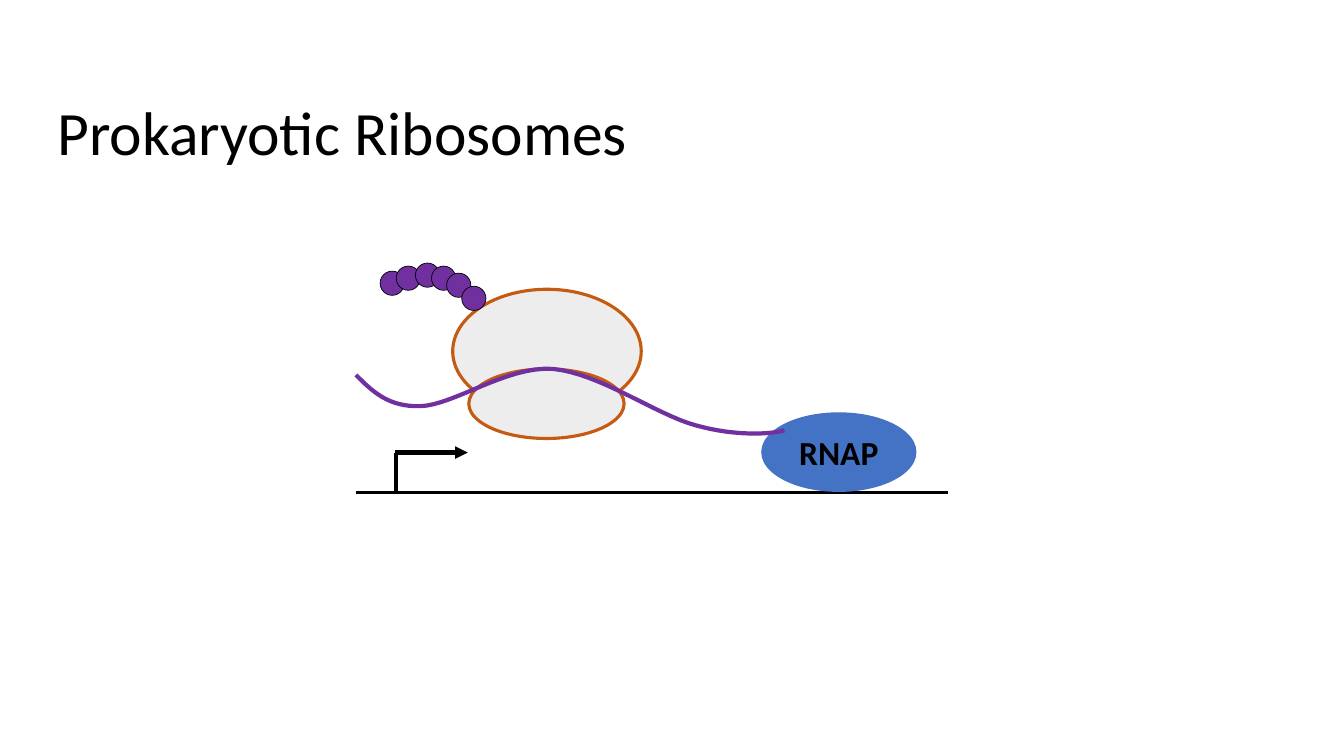
"""Builds a slide on prokaryotic ribosomes translating an mRNA during transcription."""
from lxml.etree import SubElement
from pptx import Presentation
from pptx.dml.color import RGBColor
from pptx.enum.shapes import MSO_CONNECTOR, MSO_SHAPE
from pptx.enum.text import MSO_ANCHOR, PP_ALIGN
from pptx.oxml.ns import qn
from pptx.util import Inches, Pt

BLACK = RGBColor(0x00, 0x00, 0x00)
GREY = RGBColor(0xED, 0xED, 0xED)
ORANGE = RGBColor(0xC5, 0x5A, 0x11)
PURPLE = RGBColor(0x70, 0x30, 0xA0)
BLUE = RGBColor(0x44, 0x72, 0xC4)
FONT = "Calibri"

TITLE = "Prokaryotic Ribosomes"
TITLE_BOX = (0.47, 0.44, 11.78, 1.81)
SUBUNITS = [(4.49, 2.87, 1.87, 1.23), (4.65, 3.66, 1.54, 0.69)]
BEAD_SIZE = 0.24
PEPTIDE = [(3.77, 2.69), (3.93, 2.64), (4.12, 2.61),
           (4.28, 2.64), (4.43, 2.71), (4.58, 2.84)]
DNA = ((3.53, 4.89), (9.4, 4.89))
POLYMERASE = ("RNAP", (7.55, 4.09, 1.54, 0.79))
MRNA_START = (3.53, 3.72)
MRNA_CURVES = [
    ((3.69, 3.88), (3.85, 4.04), (4.17, 4.03)),
    ((4.5, 4.02), (5.03, 3.63), (5.48, 3.66)),
    ((5.94, 3.7), (6.52, 4.12), (6.9, 4.22)),
    ((7.29, 4.33), (7.64, 4.31), (7.78, 4.27)),
]
CURVE_STEPS = 16
PROMOTER_STEM = ((3.93, 4.49), (3.93, 4.89))
PROMOTER_ARROW = ((3.92, 4.49), (4.64, 4.49))


def write(s, text, size, bold=False, align=PP_ALIGN.LEFT):
    tf = s.text_frame
    tf.word_wrap = True
    tf.vertical_anchor = MSO_ANCHOR.MIDDLE
    p = tf.paragraphs[0]
    p.text = text
    p.alignment = align
    font = p.runs[0].font
    font.name, font.size, font.bold = FONT, Pt(size), bold
    font.color.rgb = BLACK
    return p


def add_ellipse(slide, box, fill, line=None, width=0):
    s = slide.shapes.add_shape(MSO_SHAPE.OVAL, *map(Inches, box))
    s.shadow.inherit = False
    s.fill.solid()
    s.fill.fore_color.rgb = fill
    if line is None:
        s.line.fill.background()
    else:
        s.line.color.rgb = line
        s.line.width = Pt(width)
    return s


def add_line(slide, ends, width, arrow=False):
    (x1, y1), (x2, y2) = ends
    s = slide.shapes.add_connector(MSO_CONNECTOR.STRAIGHT, *map(Inches, (x1, y1, x2, y2)))
    s.line.color.rgb = BLACK
    s.line.width = Pt(width)
    if arrow:
        SubElement(s.line._get_or_add_ln(), qn("a:tailEnd"), type="triangle")
    SubElement(s._element.spPr, qn("a:effectLst"))


def bezier(points, t):
    weights = ((1 - t) ** 3, 3 * t * (1 - t) ** 2, 3 * t ** 2 * (1 - t), t ** 3)
    return tuple(Inches(sum(w * p[axis] for w, p in zip(weights, points))) for axis in (0, 1))


def add_mrna(slide):
    points, start = [], MRNA_START
    for curve in MRNA_CURVES:
        points += [bezier((start, *curve), i / CURVE_STEPS) for i in range(1, CURVE_STEPS + 1)]
        start = curve[-1]
    builder = slide.shapes.build_freeform(*map(Inches, MRNA_START))
    builder.add_line_segments(points, close=False)
    s = builder.convert_to_shape()
    s.shadow.inherit = False
    s.fill.background()
    s.line.color.rgb = PURPLE
    s.line.width = Pt(3)


def main():
    prs = Presentation()
    prs.slide_width, prs.slide_height = Inches(13.33), Inches(7.5)
    slide = prs.slides.add_slide(prs.slide_layouts[6])

    title = slide.shapes.add_textbox(*map(Inches, TITLE_BOX))
    write(title, TITLE, 44).line_spacing = 0.9

    for box in SUBUNITS:
        add_ellipse(slide, box, GREY, ORANGE, 2.25)
    for x, y in PEPTIDE:
        add_ellipse(slide, (x, y, BEAD_SIZE, BEAD_SIZE), PURPLE, BLACK, 0.5)

    add_line(slide, DNA, 2.25)
    label, box = POLYMERASE
    write(add_ellipse(slide, box, BLUE), label, 24, bold=True, align=PP_ALIGN.CENTER)
    add_mrna(slide)
    add_line(slide, PROMOTER_STEM, 3)
    add_line(slide, PROMOTER_ARROW, 3, arrow=True)

    prs.save("out.pptx")


if __name__ == "__main__":
    main()
